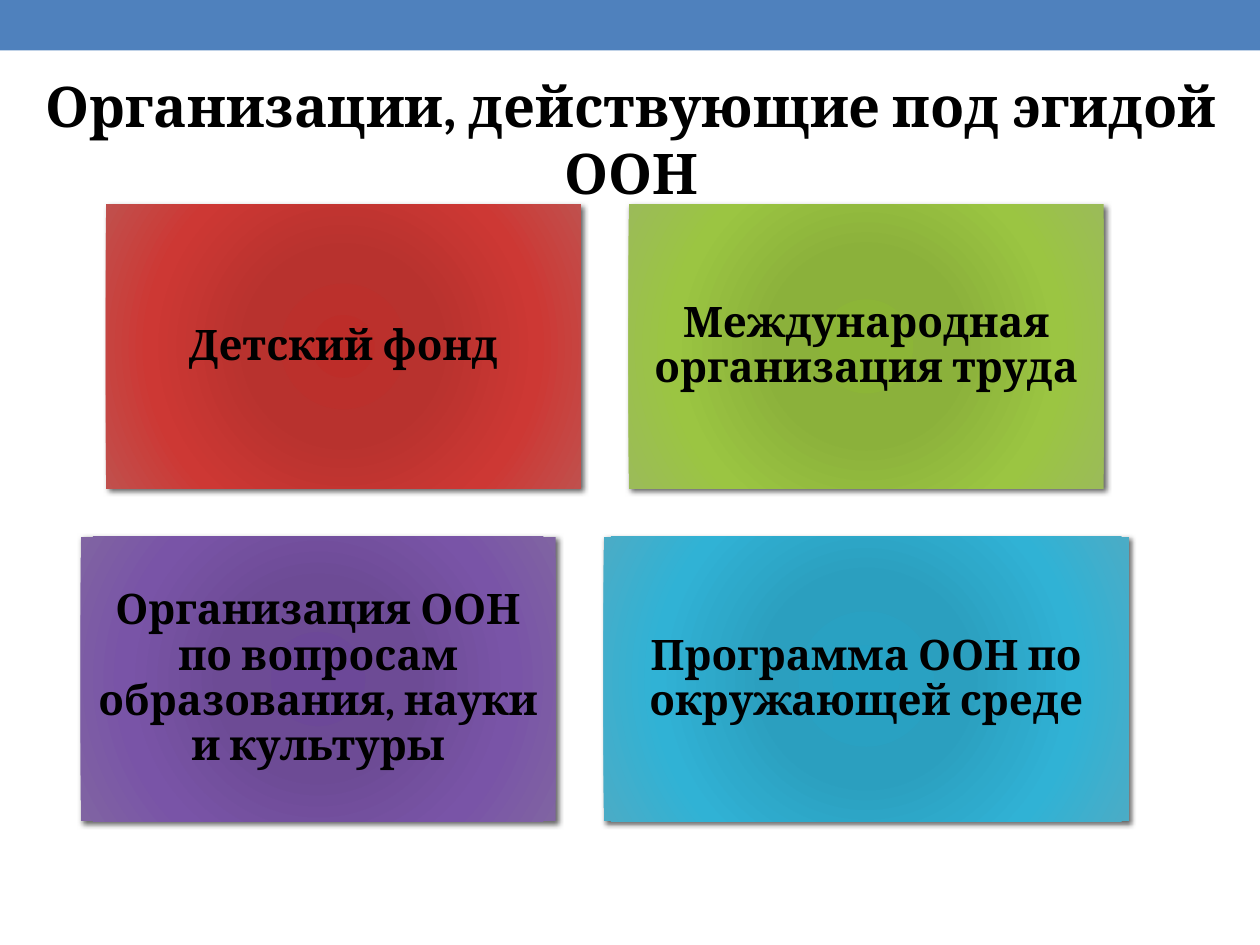
from dataclasses import dataclass

from lxml.etree import SubElement
from pptx import Presentation
from pptx.dml.color import RGBColor
from pptx.enum.shapes import MSO_SHAPE
from pptx.enum.text import MSO_ANCHOR, PP_ALIGN
from pptx.oxml.ns import qn
from pptx.util import Inches, Pt


@dataclass(frozen=True)
class Theme:
    font: str = "Cambria"
    ink: str = "000000"
    band: str = "4F81BD"
    title_size: int = 32
    card_size: int = 24
    red: tuple = ("BD2D29", "B8322E", "CD3834", "C0504D")
    green: tuple = ("8CB537", "8BB13B", "9BC542", "9BBB59")
    purple: tuple = ("6C4898", "6D4B95", "7954A7", "8064A2")
    blue: tuple = ("26A2C4", "2B9FBF", "30B2D5", "4BACC6")
    stops: tuple = (0, 34, 70, 100)


THEME = Theme()
TITLE = "Организации, действующие под эгидой ООН"
CARD_WIDTH, WIDE_CARD, CARD_HEIGHT, GAP = 3.77, 4.17, 2.26, 0.38
GRID_CENTRE, GRID_TOP = 4.8, 1.62
ROWS = [
    [("Детский фонд", CARD_WIDTH, THEME.red),
     ("Международная организация труда", CARD_WIDTH, THEME.green)],
    [("Организация ООН по вопросам образования, науки и культуры", CARD_WIDTH, THEME.purple),
     ("Программа ООН по окружающей среде", WIDE_CARD, THEME.blue)],
]


def write(frame, wording, size):
    frame.word_wrap = True
    frame.text = wording
    paragraph = frame.paragraphs[0]
    paragraph.alignment = PP_ALIGN.CENTER
    font = paragraph.runs[0].font
    font.name, font.size, font.bold = THEME.font, Pt(size), True
    font.color.rgb = RGBColor.from_string(THEME.ink)
    return paragraph


def add_rectangle(slide, left, top, width, height):
    rectangle = slide.shapes.add_shape(
        MSO_SHAPE.RECTANGLE, Inches(left), Inches(top), Inches(width), Inches(height))
    rectangle.shadow.inherit = False
    rectangle.line.fill.background()
    return rectangle


def add_colour(parent, colour):
    return SubElement(parent, qn("a:srgbClr"), val=colour)


def fill_radial(card, colours):
    card.fill.background()
    properties = card.fill._xPr
    plain = properties.find(qn("a:noFill"))
    gradient = SubElement(properties, qn("a:gradFill"), rotWithShape="1")
    properties.replace(plain, gradient)
    stops = SubElement(gradient, qn("a:gsLst"))
    for position, colour in zip(THEME.stops, colours):
        add_colour(SubElement(stops, qn("a:gs"), pos=str(position * 1000)), colour)
    circle = SubElement(gradient, qn("a:path"), path="circle")
    SubElement(circle, qn("a:fillToRect"), l="100000", t="100000", r="100000", b="100000")


def cast_shadow(card):
    effects = card.fill._xPr.find(qn("a:effectLst"))
    shadow = SubElement(effects, qn("a:outerShdw"), blurRad=str(Pt(3)), dist=str(Pt(2)),
                        dir=str(45 * 60000), algn="tl", rotWithShape="0")
    SubElement(add_colour(shadow, THEME.ink), qn("a:alpha"), val="60000")


def add_card(slide, wording, left, top, width, colours):
    card = add_rectangle(slide, left, top, width, CARD_HEIGHT)
    fill_radial(card, colours)
    cast_shadow(card)
    frame = card.text_frame
    frame.vertical_anchor = MSO_ANCHOR.MIDDLE
    frame.margin_left = frame.margin_right = Inches(0.1)
    frame.margin_top = frame.margin_bottom = Inches(0.1)
    write(frame, wording, THEME.card_size).line_spacing = 0.9


def main():
    deck = Presentation()
    deck.slide_width, deck.slide_height = Inches(10), Inches(7.5)
    slide = deck.slides.add_slide(deck.slide_layouts[6])

    band = add_rectangle(slide, 0, 0, 10, 0.4)
    band.fill.solid()
    band.fill.fore_color.rgb = RGBColor.from_string(THEME.band)

    heading = slide.shapes.add_textbox(Inches(0.1), Inches(0.52), Inches(9.82), Inches(0.64))
    write(heading.text_frame, TITLE, THEME.title_size)

    for row, cards in enumerate(ROWS):
        row_width = sum(width for _, width, _ in cards) + GAP * (len(cards) - 1)
        left = GRID_CENTRE - row_width / 2
        top = GRID_TOP + row * (CARD_HEIGHT + GAP)
        for wording, width, colours in cards:
            add_card(slide, wording, left, top, width, colours)
            left += width + GAP

    deck.save("out.pptx")


if __name__ == "__main__":
    main()
